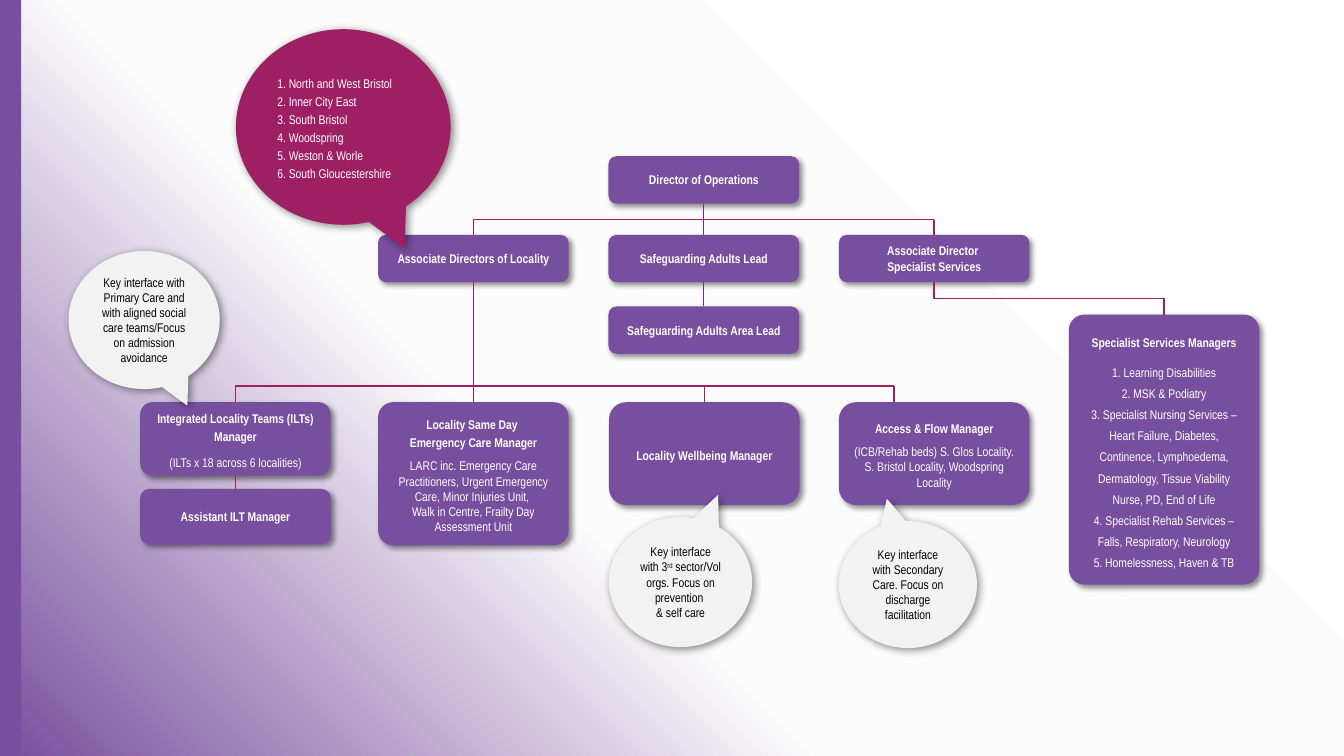
import collections

import pptx
import pptx.dml.color
import pptx.enum.shapes
import pptx.enum.text
import pptx.oxml
import pptx.oxml.ns
import pptx.util

RGBColor = pptx.dml.color.RGBColor
PURPLE = RGBColor(0x78, 0x4E, 0x9E)
MAGENTA = RGBColor(0x9E, 0x1F, 0x63)
PALE_GREY = RGBColor(0xF2, 0xF2, 0xF2)
OFF_WHITE = RGBColor(0xFB, 0xFB, 0xFB)
WHITE = RGBColor(0xFF, 0xFF, 0xFF)
BLACK = RGBColor(0, 0, 0)

Inches = pptx.util.Inches
Shapes = pptx.enum.shapes.MSO_SHAPE
Connectors = pptx.enum.shapes.MSO_CONNECTOR
Align = pptx.enum.text.PP_ALIGN
Area = collections.namedtuple("Area", "left top width height")

SLIDE_WIDTH, SLIDE_HEIGHT = 13.33, 7.5
BOX_WIDTH, BOX_HEIGHT = 1.89, 0.47
COLUMN_STEP = 2.285
TOP, LEFT, BOTTOM, RIGHT = range(4)
DRAWING = pptx.oxml.ns.nsdecls("a")


def paint_background(slide):
    fill = slide.background.fill
    fill.gradient()
    fill.gradient_angle = 225
    stops = fill._fill._gradFill.find(pptx.oxml.ns.qn("a:gsLst"))
    for stop in list(stops):
        stops.remove(stop)
    for position, color in ((0, WHITE), (61, OFF_WHITE), (100, PURPLE)):
        stops.append(pptx.oxml.parse_xml(
            f'<a:gs {DRAWING} pos="{position * 1000}"><a:srgbClr val="{color}"/></a:gs>'))


def write_text(shape, paragraphs, color=WHITE, align=Align.CENTER, heading=False,
               heading_spacing=1.0, spacing=1.0):
    """Write paragraphs; a caret toggles superscript and a newline breaks the line."""
    frame = shape.text_frame
    frame.word_wrap = True
    frame.vertical_anchor = pptx.enum.text.MSO_ANCHOR.MIDDLE
    for index, text in enumerate(paragraphs):
        paragraph = frame.paragraphs[0] if index == 0 else frame.add_paragraph()
        is_heading = heading and index == 0
        paragraph.alignment = align
        paragraph.line_spacing = heading_spacing if is_heading else spacing
        if is_heading and len(paragraphs) > 1:
            paragraph.space_after = pptx.util.Pt(6)
        for part_index, part in enumerate(text.split("^")):
            for line_index, line in enumerate(part.split("\n")):
                if line_index:
                    paragraph.add_line_break()
                run = paragraph.add_run()
                run.text = line
                run.font.name = "Arial Narrow"
                run.font.size = pptx.util.Pt(9)
                run.font.bold = is_heading
                run.font.color.rgb = color
                if part_index % 2:
                    run._r.get_or_add_rPr().set("baseline", "30000")


def add_panel(slide, kind, area, color, shadow=None):
    """Add a borderless shape; shadow is a pair of blur and distance in points."""
    shape = slide.shapes.add_shape(kind, *map(Inches, area))
    shape.fill.solid()
    shape.fill.fore_color.rgb = color
    shape.line.fill.background()
    shape.shadow.inherit = False
    if shadow:
        blur, distance = map(pptx.util.Pt, shadow)
        effects = shape._element.spPr.find(pptx.oxml.ns.qn("a:effectLst"))
        effects.append(pptx.oxml.parse_xml(
            f'<a:outerShdw {DRAWING} blurRad="{blur}" dist="{distance}" dir="2700000" '
            'algn="tl" rotWithShape="0"><a:srgbClr val="000000">'
            '<a:alpha val="43000"/></a:srgbClr></a:outerShdw>'))
    return shape


def add_role(slide, left, top, height, paragraphs, corner=0.1667, **text_format):
    role = add_panel(slide, Shapes.ROUNDED_RECTANGLE, (left, top, BOX_WIDTH, height),
                     PURPLE, (4, 3))
    role.adjustments[0] = corner
    write_text(role, paragraphs, heading=True, **text_format)
    return role


def add_callout(slide, area, tip, paragraphs, fill=PALE_GREY, **text_format):
    callout = add_panel(slide, Shapes.OVAL_CALLOUT, area, fill, (6, 2))
    callout.adjustments[0], callout.adjustments[1] = tip
    write_text(callout, paragraphs, **text_format)


def add_link(slide, start, end, kind=Connectors.STRAIGHT, start_at=None, end_at=None):
    """Draw a line between points, joining an end to a (shape, side) pair if given."""
    link = slide.shapes.add_connector(kind, *map(Inches, (*start, *end)))
    link.line.color.rgb = MAGENTA
    link.line.width = pptx.util.Pt(1)
    link._element.spPr.append(pptx.oxml.parse_xml(f"<a:effectLst {DRAWING}/>"))
    if start_at:
        link.begin_connect(*start_at)
    if end_at:
        link.end_connect(*end_at)
    return link


def add_vertical_elbow(slide, start, end):
    """Draw an elbow that leaves and arrives vertically, as a turned connector."""
    (x1, y1), (x2, y2) = start, end
    middle_x, middle_y = (x1 + x2) / 2, (y1 + y2) / 2
    half_width, half_height = (y2 - y1) / 2, (x2 - x1) / 2
    elbow = add_link(slide, (middle_x + half_width, middle_y - half_height),
                     (middle_x - half_width, middle_y + half_height), Connectors.ELBOW)
    elbow._element.spPr.find(pptx.oxml.ns.qn("a:xfrm")).set("rot", str(270 * 60000))


def add_directors(slide, area):
    """Place the director, three direct reports and the area lead; return the reports."""
    center = area.left + COLUMN_STEP + BOX_WIDTH / 2
    bar = area.top + 0.63
    director = add_role(slide, area.left + COLUMN_STEP, area.top, BOX_HEIGHT,
                        ["Director of Operations"])
    titles = ("Associate Directors of Locality", "Safeguarding Adults Lead",
              "Associate Director \nSpecialist Services")
    reports = []
    for column, title in enumerate(titles):
        left = area.left + column * COLUMN_STEP
        report = add_role(slide, left, area.top + 0.78, BOX_HEIGHT, [title])
        x = left + BOX_WIDTH / 2
        add_link(slide, (x, bar), (x, area.top + 0.78), end_at=(report, TOP))
        reports.append(report)
    add_link(slide, (center, area.top + BOX_HEIGHT), (center, bar), start_at=(director, BOTTOM))
    add_link(slide, (center - COLUMN_STEP, bar), (center + COLUMN_STEP, bar))
    lead = add_role(slide, area.left + COLUMN_STEP, area.top + area.height - BOX_HEIGHT,
                    BOX_HEIGHT, ["Safeguarding Adults Area Lead"])
    add_link(slide, (center, bar), (center, bar), start_at=(reports[1], BOTTOM),
             end_at=(lead, TOP))
    return reports


def add_localities(slide, area, parent):
    """Place the locality managers under a shared bar fed by the parent box."""
    bar = area.top - 0.16
    managers = (
        (0, 0.73, 0.1667, 1.2, 0.5,
         ["Integrated Locality Teams (ILTs) Manager", "(ILTs x 18 across 6 localities)"]),
        (2.36, 1.42, 0.104, 1, None,
         ["Locality Same Day \nEmergency Care Manager",
          "LARC inc. Emergency Care Practitioners, Urgent Emergency Care, Minor Injuries "
          "Unit, \nWalk in Centre, Frailty Day Assessment Unit"]),
        (4.65, 1.02, 0.1667, 1, 0.5, ["Locality Wellbeing Manager"]),
        (6.93, 1.02, 0.1667, 1, 0.29,
         ["Access & Flow Manager",
          "(ICB/Rehab beds) S. Glos Locality. S. Bristol Locality, Woodspring Locality"]))
    roles = []
    for offset, height, corner, spacing, drop, paragraphs in managers:
        left = area.left + offset
        role = add_role(slide, left, area.top, height, paragraphs, corner,
                        heading_spacing=1.2, spacing=spacing)
        roles.append(role)
        if drop:
            x = left + BOX_WIDTH * drop
            add_link(slide, (x, bar), (x, area.top), end_at=(role, TOP) if drop == 0.5 else None)
    center = area.left + BOX_WIDTH / 2
    add_link(slide, (center, bar), (area.left + 7.48, bar))
    stem = area.left + 2.36 + BOX_WIDTH / 2
    add_link(slide, (stem, bar), (stem, bar), start_at=(parent, BOTTOM), end_at=(roles[1], TOP))
    assistant = add_role(slide, area.left, area.top + 0.86, 0.55, ["Assistant ILT Manager"])
    add_link(slide, (center, bar), (center, bar), start_at=(roles[0], BOTTOM),
             end_at=(assistant, TOP))


def add_specialists(slide, area, parent):
    add_role(slide, area.left, area.top, area.height, [
        "Specialist Services Managers", "1. Learning Disabilities", "2. MSK & Podiatry",
        "3. Specialist Nursing Services – Heart Failure, Diabetes, Continence, Lymphoedema, "
        "Dermatology, Tissue Viability Nurse, PD, End of Life",
        "4. Specialist Rehab Services – Falls, Respiratory, Neurology",
        "5. Homelessness, Haven & TB"], 0.083, heading_spacing=1.4, spacing=1.4)
    start = ((parent.left + parent.width / 2) / Inches(1),
             (parent.top + parent.height) / Inches(1))
    add_vertical_elbow(slide, start, (area.left + BOX_WIDTH / 2, area.top))


def add_notes_on_roles(slide):
    add_callout(slide, Area(0.68, 2.49, 1.5, 1.37), (0.286, 0.62),
                ["Key interface with Primary Care and with aligned social care teams/Focus "
                 "on admission avoidance"], color=BLACK)
    add_callout(slide, Area(6.04, 5.13, 1.42, 1.29), (0.262, -0.671),
                ["Key interface with 3^rd^ sector/Vol orgs. Focus on prevention \n& self care"],
                color=BLACK)
    add_callout(slide, Area(8.32, 5.17, 1.37, 1.26), (-0.152, -0.676),
                ["Key interface with Secondary Care. Focus on discharge facilitation"],
                color=BLACK)
    add_callout(slide, Area(2.34, 0.29, 2.13, 1.94), (0.286, 0.62),
                ["1. North and West Bristol", "2. Inner City East", "3. South Bristol",
                 "4. Woodspring", "5. Weston & Worle", "6. South Gloucestershire"],
                MAGENTA, align=Align.LEFT, spacing=1.2)


def main():
    presentation = pptx.Presentation()
    presentation.slide_width = Inches(SLIDE_WIDTH)
    presentation.slide_height = Inches(SLIDE_HEIGHT)
    slide = presentation.slides.add_slide(presentation.slide_layouts[6])
    paint_background(slide)
    add_panel(slide, Shapes.RECTANGLE, (0, 0, 0.21, SLIDE_HEIGHT), PURPLE)
    reports = add_directors(slide, Area(3.75, 1.55, 6.46, 1.96))
    add_localities(slide, Area(1.39, 3.99, 8.82, 1.42), reports[0])
    add_specialists(slide, Area(10.6, 3.12, BOX_WIDTH, 2.68), reports[2])
    add_notes_on_roles(slide)
    presentation.save("out.pptx")


if __name__ == "__main__":
    main()
